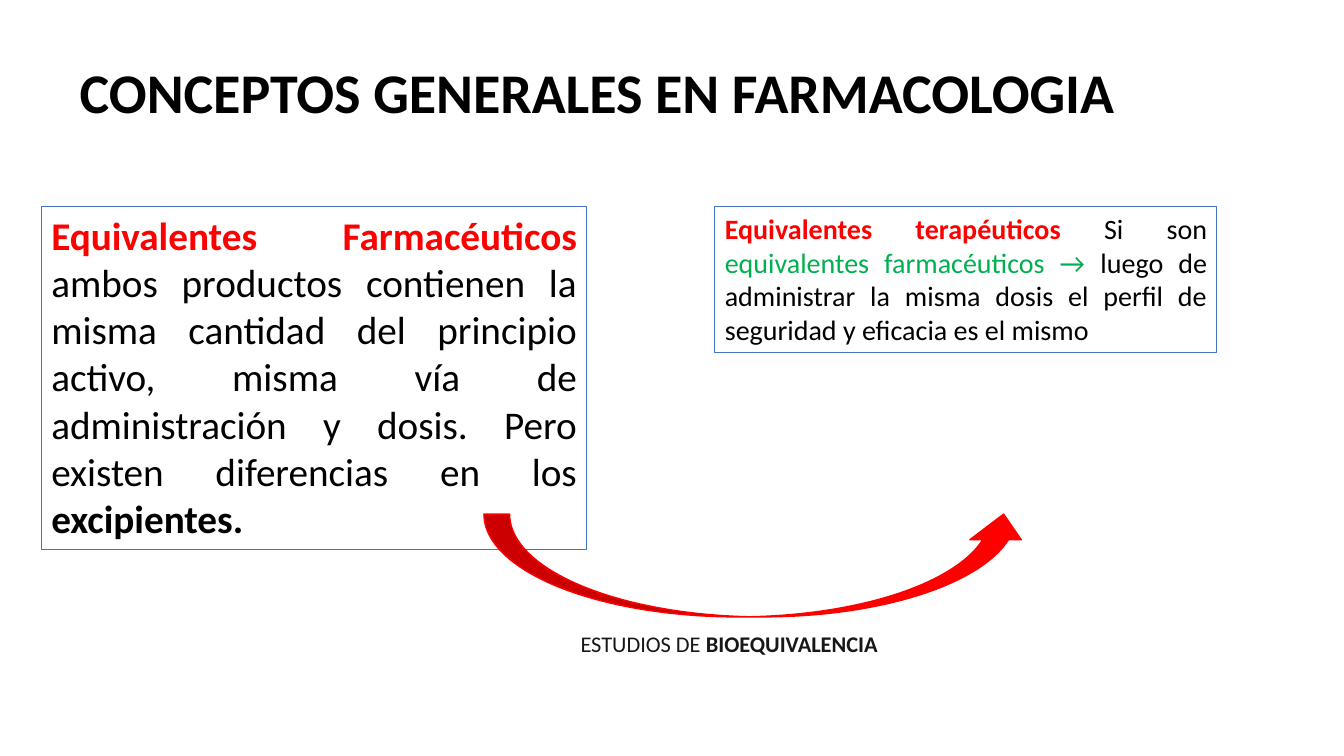
from typing import NamedTuple

from pptx import Presentation
from pptx.dml.color import RGBColor
from pptx.enum.shapes import MSO_SHAPE
from pptx.enum.text import MSO_ANCHOR, MSO_AUTO_SIZE, PP_ALIGN
from pptx.util import Inches, Pt

RECTANGLE = MSO_SHAPE.RECTANGLE
CURVED_ARROW = MSO_SHAPE.CURVED_UP_ARROW
MIDDLE, TOP = MSO_ANCHOR.MIDDLE, MSO_ANCHOR.TOP
GROW, FIXED = MSO_AUTO_SIZE.SHAPE_TO_FIT_TEXT, MSO_AUTO_SIZE.NONE
JUSTIFY, LEFT = PP_ALIGN.JUSTIFY, PP_ALIGN.LEFT

FONT = "Calibri"
COLOURS = {
    "white": "FFFFFF",
    "black": "000000",
    "red": "FF0000",
    "green": "00B050",
    "border": "4472C4",
    "caption": "181717",
}
WIDTH, HEIGHT = Inches(13.33), Inches(7.5)
DEFINITIONS_TOP = 27.33


class Area(NamedTuple):
    """Left, top, width and height in percent of the slide."""
    left: float
    top: float
    width: float
    height: float

    def lengths(self) -> tuple[int, int, int, int]:
        return (int(WIDTH * self.left / 100), int(HEIGHT * self.top / 100),
                int(WIDTH * self.width / 100), int(HEIGHT * self.height / 100))


class Span(NamedTuple):
    text: str
    colour: str = "black"
    bold: bool = False


class Definition(NamedTuple):
    area: Area
    size: int
    spans: list[Span]


BAND = Area(0, 0, 100, 25.33)
TITLE = Area(5.18, 5.87, 82.6, 13.47)
ARROW = Area(36.01, 68, 40.58, 13.6)
CAPTION = Area(42.46, 80.27, 23.93, 6.67)

DEFINITIONS = [
    Definition(Area(3.08, DEFINITIONS_TOP, 40.58, 45.33), 28, [
        Span("Equivalentes Farmacéuticos ", "red", True),
        Span("ambos productos contienen la misma cantidad del principio activo, "
             "misma vía de administración y dosis. Pero existen diferencias en los "),
        Span("excipientes.", bold=True),
    ]),
    Definition(Area(53.19, DEFINITIONS_TOP, 37.36, 19.33), 20, [
        Span("Equivalentes terapéuticos ", "red", True),
        Span("Si son "),
        Span("equivalentes farmacéuticos → ", "green"),
        Span("luego de administrar la misma dosis el perfil de seguridad "
             "y eficacia es el mismo"),
    ]),
]


def colour(name: str) -> RGBColor:
    return RGBColor.from_string(COLOURS[name])


def write(box, spans: list[Span], size: int, align=JUSTIFY, anchor=TOP,
          spacing: float = 1.0, wrap: bool = True, fit=GROW) -> None:
    frame = box.text_frame
    frame.word_wrap = wrap
    frame.auto_size = fit
    frame.vertical_anchor = anchor
    para = frame.paragraphs[0]
    para.alignment = align
    para.line_spacing = spacing
    for span in spans:
        run = para.add_run()
        run.text = span.text
        run.font.name = FONT
        run.font.size = Pt(size)
        run.font.bold = span.bold
        run.font.color.rgb = colour(span.colour)


def add_shape(page, kind, area: Area, fill: str = "", line: str = "",
              line_width: float = 0.75):
    shape = page.shapes.add_shape(kind, *area.lengths())
    shape.shadow.inherit = False
    if fill:
        shape.fill.solid()
        shape.fill.fore_color.rgb = colour(fill)
    else:
        shape.fill.background()
    if line:
        shape.line.color.rgb = colour(line)
        shape.line.width = Pt(line_width)
    else:
        shape.line.fill.background()
    return shape


def main() -> None:
    deck = Presentation()
    deck.slide_width, deck.slide_height = WIDTH, HEIGHT
    page = deck.slides.add_slide(deck.slide_layouts[5])

    # Title over a white band
    title = page.shapes.title
    band = add_shape(page, RECTANGLE, BAND, fill="white")
    title._element.addprevious(band._element)
    title.left, title.top, title.width, title.height = TITLE.lengths()
    write(title, [Span("CONCEPTOS GENERALES EN FARMACOLOGIA", bold=True)], 40,
          align=LEFT, anchor=MIDDLE, spacing=0.9, fit=FIXED)

    # Two framed definitions
    for definition in DEFINITIONS:
        box = add_shape(page, RECTANGLE, definition.area, line="border")
        write(box, definition.spans, definition.size)

    # Arrow from one to the other, with its caption
    add_shape(page, CURVED_ARROW, ARROW, fill="red", line="red", line_width=1)
    caption = page.shapes.add_textbox(*CAPTION.lengths())
    write(caption, [Span("ESTUDIOS DE ", "caption"),
                    Span("BIOEQUIVALENCIA", "caption", True)],
          16, spacing=1.7, wrap=False)

    deck.save("out.pptx")


if __name__ == "__main__":
    main()
